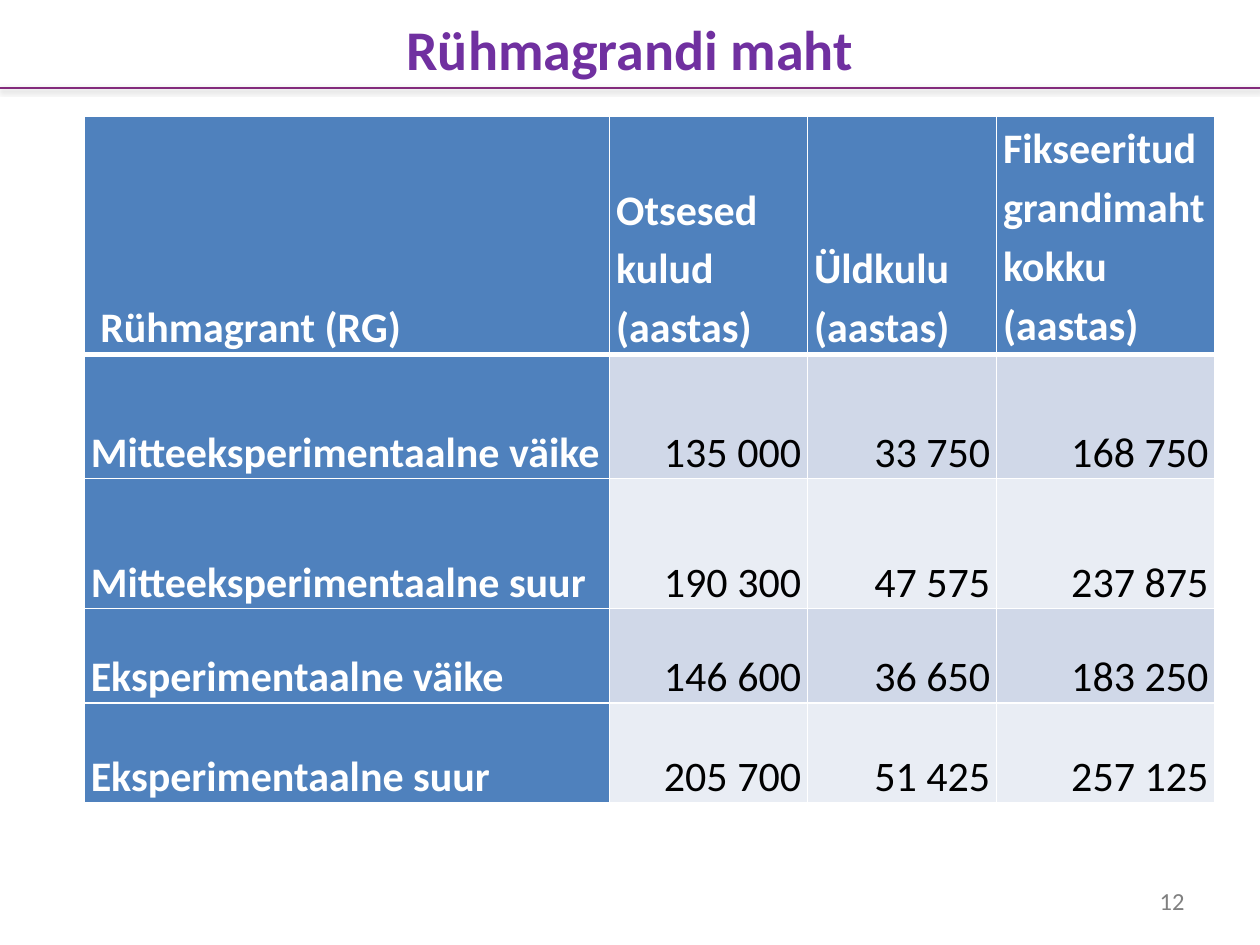
from lxml.etree import SubElement
from pptx import Presentation
from pptx.dml.color import RGBColor
from pptx.enum.shapes import MSO_CONNECTOR
from pptx.enum.text import MSO_ANCHOR as Anchor, PP_ALIGN as Align
from pptx.oxml import parse_xml
from pptx.oxml.ns import nsdecls, qn
from pptx.util import Cm, Pt

FONT = "Calibri"
PURPLE = RGBColor(0x70, 0x30, 0xA0)
PLUM = RGBColor(0x83, 0x2B, 0x7C)
BLUE = RGBColor(0x4F, 0x81, 0xBD)
BANDS = (RGBColor(0xD0, 0xD8, 0xE8), RGBColor(0xE9, 0xED, 0xF4))
GRAY = RGBColor(0x80, 0x80, 0x80)
WHITE = RGBColor(0xFF, 0xFF, 0xFF)
BLACK = RGBColor(0x00, 0x00, 0x00)

COLUMN_WIDTHS = (10.59, 3.99, 3.81, 4.4)
ROW_HEIGHTS = (4.8, 2.51, 2.62, 1.9, 2.01)
GRANTS = (
    (" Rühmagrant (RG)", "Otsesed kulud (aastas)", "Üldkulu (aastas)",
     "Fikseeritud grandimaht kokku (aastas) "),
    ("Mitteeksperimentaalne väike", "135 000", "33 750", "168 750"),
    ("Mitteeksperimentaalne suur", "190 300", "47 575", "237 875"),
    ("Eksperimentaalne väike", "146 600", "36 650", "183 250"),
    ("Eksperimentaalne suur", "205 700", "51 425", "257 125"),
)


def add_text(frame, text, size, color, align, bold=False):
    paragraph = frame.paragraphs[0]
    paragraph.alignment = align
    run = paragraph.add_run()
    run.text = text
    run.font.name = FONT
    run.font.size = Pt(size)
    run.font.bold = bold
    run.font.color.rgb = color
    return paragraph


def add_title(slide, left, top, width, height):
    title = slide.shapes.title
    title.left, title.top = Cm(left), Cm(top)
    title.width, title.height = Cm(width), Cm(height)
    title.text_frame.vertical_anchor = Anchor.MIDDLE
    add_text(title.text_frame, "Rühmagrandi maht", 32, PURPLE, Align.CENTER, True)


def add_title_rule(slide, left, top, width):
    """Draw the line under the title, with its soft shadow."""
    rule = slide.shapes.add_connector(
        MSO_CONNECTOR.STRAIGHT, Cm(left), Cm(top), Cm(left + width), Cm(top))
    rule.line.color.rgb = PLUM
    rule.line.width = Pt(1)
    effects = SubElement(rule.element.spPr, qn("a:effectLst"))
    shadow = SubElement(effects, qn("a:outerShdw"), blurRad=str(Pt(3.1)),
                        dist=str(Pt(1)), dir="5400000", rotWithShape="0")
    color = SubElement(shadow, qn("a:srgbClr"), val=str(BLACK))
    SubElement(color, qn("a:alpha"), val="25000")


def set_borders(cell, bottom_width):
    properties = cell._tc.get_or_add_tcPr()
    for index, side in enumerate("LRTB"):
        width = Pt(bottom_width if side == "B" else 1)
        properties.insert(index, parse_xml(
            f'<a:ln{side} {nsdecls("a")} w="{width}"><a:solidFill>'
            f'<a:srgbClr val="{WHITE}"/></a:solidFill></a:ln{side}>'))


def add_grant_table(slide, left, top):
    table = slide.shapes.add_table(
        len(GRANTS), len(COLUMN_WIDTHS), Cm(left), Cm(top),
        Cm(sum(COLUMN_WIDTHS)), Cm(sum(ROW_HEIGHTS))).table
    for column, width in zip(table.columns, COLUMN_WIDTHS):
        column.width = Cm(width)
    for row, height in zip(table.rows, ROW_HEIGHTS):
        row.height = Cm(height)
    for row_index, texts in enumerate(GRANTS):
        for column_index, text in enumerate(texts):
            cell = table.cell(row_index, column_index)
            is_heading = row_index == 0 or column_index == 0
            cell.margin_left = cell.margin_right = Cm(0.13)
            cell.margin_top = cell.margin_bottom = 0
            cell.vertical_anchor = Anchor.BOTTOM
            cell.fill.solid()
            cell.fill.fore_color.rgb = BLUE if is_heading else BANDS[(row_index - 1) % 2]
            set_borders(cell, 3 if row_index == 0 else 1)
            paragraph = add_text(
                cell.text_frame, text, 24, WHITE if is_heading else BLACK,
                Align.JUSTIFY if is_heading else Align.RIGHT, is_heading)
            paragraph.line_spacing = 1.15
    table.cell(0, len(COLUMN_WIDTHS) - 1).vertical_anchor = Anchor.TOP


def add_slide_number(slide, left, top, width, height):
    box = slide.shapes.add_textbox(Cm(left), Cm(top), Cm(width), Cm(height))
    box.text_frame.word_wrap = True
    box.text_frame.vertical_anchor = Anchor.MIDDLE
    add_text(box.text_frame, "12", 14, GRAY, Align.RIGHT)


def main():
    presentation = Presentation()
    presentation.slide_width, presentation.slide_height = Cm(25.4), Cm(19.05)
    slide = presentation.slides.add_slide(presentation.slide_layouts[5])
    add_title_rule(slide, 0, 1.78, 25.4)
    add_title(slide, 1.27, 0, 22.86, 1.93)
    add_grant_table(slide, 1.7, 2.34)
    add_slide_number(slide, 18.2, 17.65, 5.93, 1.02)
    presentation.save("out.pptx")


if __name__ == "__main__":
    main()
